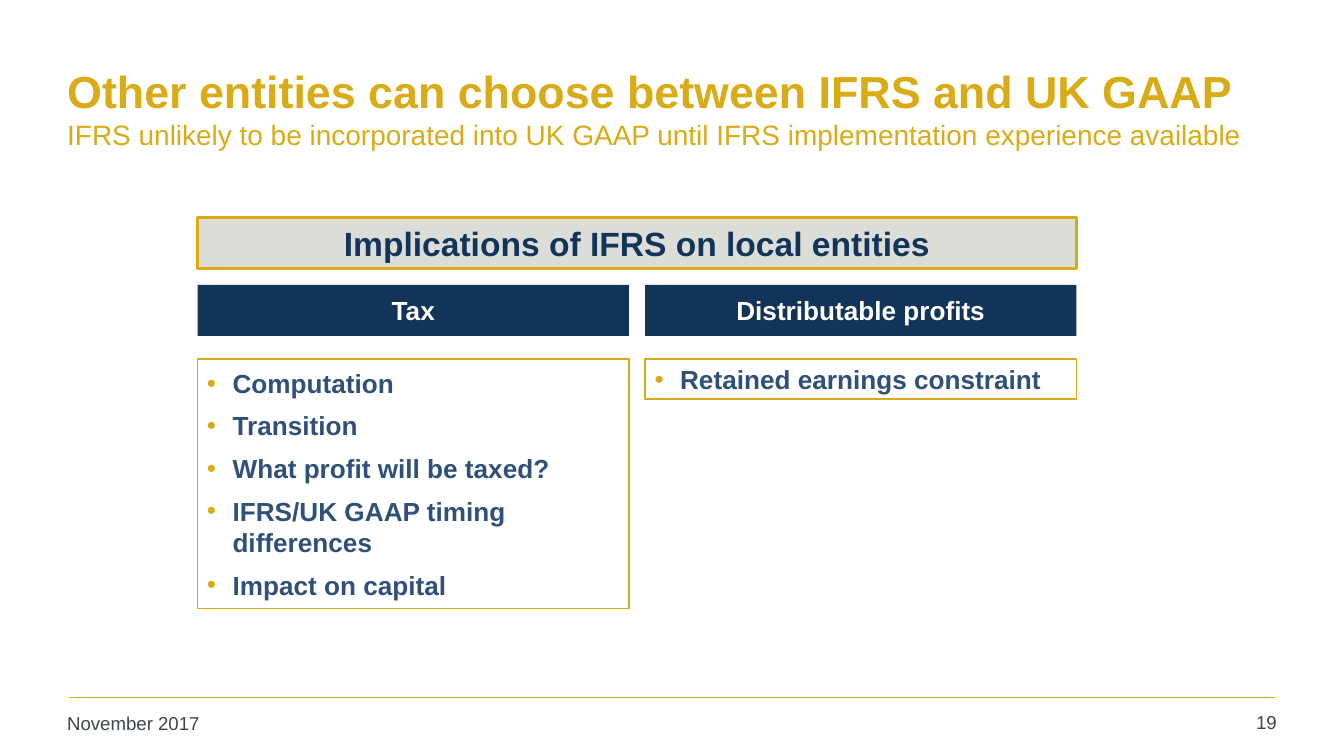
"""Build the slide on choosing between IFRS and UK GAAP."""
from copy import deepcopy
from dataclasses import dataclass

from lxml.etree import SubElement
from pptx import Presentation
from pptx.dml.color import RGBColor
from pptx.enum.shapes import MSO_CONNECTOR, MSO_SHAPE
from pptx.enum.text import MSO_ANCHOR, MSO_AUTO_SIZE, PP_ALIGN
from pptx.oxml.ns import qn
from pptx.util import Inches, Pt

GOLD = RGBColor(0xD9, 0xAB, 0x16)
BORDER_GOLD = RGBColor(0xD9, 0xAA, 0x11)
NAVY = RGBColor(0x11, 0x34, 0x58)
BLUE = RGBColor(0x2F, 0x50, 0x79)
SILVER = RGBColor(0xDC, 0xDD, 0xD9)
SLATE = RGBColor(0x3F, 0x45, 0x48)
WHITE = RGBColor(0xFF, 0xFF, 0xFF)

FONT = "Arial"
SLIDE_WIDTH = 10
SLIDE_HEIGHT = SLIDE_WIDTH * 9 / 16
MARGIN = 0.43
GRID_LEFT, COLUMN_WIDTH, GUTTER = 1.47, 3.21, 0.12
BANNER_TOP, HEADING_TOP, LIST_TOP = 1.62, 2.12, 2.67
BAND_HEIGHT = 0.38
INDENT = Inches(0.19)


@dataclass(frozen=True)
class Topic:
    heading: str
    points: tuple[str, ...]
    list_height: float


@dataclass(frozen=True)
class Footer:
    text: str
    left: float
    top: float
    width: float
    height: float
    align: PP_ALIGN


TOPICS = (
    Topic("Tax", ("Computation", "Transition", "What profit will be taxed?",
                  "IFRS/UK GAAP timing differences", "Impact on capital"), 1.86),
    Topic("Distributable profits", ("Retained earnings constraint",), 0.3),
)
FOOTERS = (
    Footer("19", SLIDE_WIDTH - MARGIN - 0.71, 5.25, 0.71, 0.28, PP_ALIGN.RIGHT),
    Footer("November 2017", MARGIN, 5.26, 2.2, 0.27, PP_ALIGN.LEFT),
)


def cell(column: int, top: float, height: float, span: int = 1) -> tuple:
    """Return the left, top, width and height of a span of grid columns."""
    step = COLUMN_WIDTH + GUTTER
    return (Inches(GRID_LEFT + column * step), Inches(top),
            Inches(span * step - GUTTER), Inches(height))


def place(shape, bounds: tuple) -> None:
    """Move a placeholder to the given bounds."""
    shape.left, shape.top, shape.width, shape.height = bounds


def set_frame(shape, anchor: MSO_ANCHOR, sides: float = 0.07, ends: float = 0.04):
    """Set wrapping, anchor and insets, and return the text frame."""
    frame = shape.text_frame
    frame.word_wrap = True
    frame.auto_size = MSO_AUTO_SIZE.NONE
    frame.vertical_anchor = anchor
    frame.margin_left = frame.margin_right = Inches(sides)
    frame.margin_top = frame.margin_bottom = Inches(ends)
    return frame


def add_run(paragraph, text: str, size: float, color: RGBColor, bold: bool = False):
    """Append a formatted run."""
    run = paragraph.add_run()
    run.text = text
    run.font.name = FONT
    run.font.size = Pt(size)
    run.font.bold = bold
    run.font.color.rgb = color
    return run


def add_bullet(paragraph) -> None:
    """Give a paragraph a gold bullet with a hanging indent."""
    properties = paragraph._p.get_or_add_pPr()
    properties.set("marL", str(INDENT))
    properties.set("indent", str(-INDENT))
    color = SubElement(properties, qn("a:buClr"))
    SubElement(color, qn("a:srgbClr"), val=str(GOLD))
    SubElement(properties, qn("a:buFont"), typeface=FONT)
    SubElement(properties, qn("a:buChar"), char="•")


def draw_title(title) -> None:
    """Fill the title placeholder with a headline and a subtitle line."""
    place(title, (Inches(MARGIN), Inches(0.33),
                  Inches(SLIDE_WIDTH - 2 * MARGIN), Inches(0.94)))
    paragraph = set_frame(title, MSO_ANCHOR.MIDDLE).paragraphs[0]
    paragraph.alignment = PP_ALIGN.LEFT
    headline = add_run(paragraph, "Other entities can choose between IFRS and UK GAAP",
                       24, GOLD, True)
    paragraph.add_line_break()
    paragraph._p[-1].append(deepcopy(headline._r.rPr))
    add_run(paragraph, "IFRS unlikely to be incorporated into UK GAAP until IFRS "
            "implementation experience available", 15, GOLD)


def draw_band(slide, bounds: tuple, fill: RGBColor):
    """Draw a borderless filled rectangle."""
    band = slide.shapes.add_shape(MSO_SHAPE.RECTANGLE, *bounds)
    band.shadow.inherit = False
    band.fill.solid()
    band.fill.fore_color.rgb = fill
    band.line.fill.background()
    return band


def draw_border(shape, width: float) -> None:
    """Outline a shape in gold."""
    shape.line.color.rgb = BORDER_GOLD
    shape.line.width = Pt(width)


def draw_banner(slide) -> None:
    """Draw the banner across both columns."""
    banner = draw_band(slide, cell(0, BANNER_TOP, BAND_HEIGHT, span=2), SILVER)
    draw_border(banner, 1.5)
    frame = set_frame(banner, MSO_ANCHOR.TOP)
    frame.auto_size = MSO_AUTO_SIZE.SHAPE_TO_FIT_TEXT
    paragraph = frame.paragraphs[0]
    paragraph.alignment = PP_ALIGN.CENTER
    add_run(paragraph, "Implications of IFRS on local entities", 18, NAVY, True)


def draw_topic(slide, column: int, topic: Topic, body) -> None:
    """Draw a topic heading and fill the list below it."""
    heading = draw_band(slide, cell(column, HEADING_TOP, BAND_HEIGHT), NAVY)
    paragraph = set_frame(heading, MSO_ANCHOR.MIDDLE, 0.06, 0.06).paragraphs[0]
    paragraph.alignment = PP_ALIGN.CENTER
    paragraph.space_after = Pt(9)
    add_run(paragraph, topic.heading, 14, WHITE, True)

    place(body, cell(column, LIST_TOP, topic.list_height))
    draw_border(body, 0.75)
    frame = set_frame(body, MSO_ANCHOR.MIDDLE)
    for index, point in enumerate(topic.points):
        paragraph = frame.add_paragraph() if index else frame.paragraphs[0]
        add_bullet(paragraph)
        paragraph.space_before = Pt(0)
        paragraph.space_after = Pt(6)
        add_run(paragraph, point, 14, BLUE, True)


def draw_footer(slide, footer: Footer) -> None:
    """Draw one footer text."""
    box = slide.shapes.add_textbox(Inches(footer.left), Inches(footer.top),
                                   Inches(footer.width), Inches(footer.height))
    paragraph = set_frame(box, MSO_ANCHOR.TOP).paragraphs[0]
    paragraph.alignment = footer.align
    add_run(paragraph, footer.text, 10, SLATE)


def draw_rule(slide) -> None:
    """Draw the gold rule above the footer."""
    inset, top = 0.51, Inches(5.19)
    rule = slide.shapes.add_connector(MSO_CONNECTOR.STRAIGHT, Inches(inset), top,
                                      Inches(SLIDE_WIDTH - inset), top)
    rule.line.color.rgb = GOLD
    rule.line.width = Pt(1)
    SubElement(rule._element.spPr, qn("a:effectLst"))


def main() -> None:
    """Build and save the presentation."""
    presentation = Presentation()
    presentation.slide_width = Inches(SLIDE_WIDTH)
    presentation.slide_height = Inches(SLIDE_HEIGHT)
    slide = presentation.slides.add_slide(presentation.slide_layouts[3])
    title, *bodies = slide.placeholders
    draw_rule(slide)
    draw_title(title)
    draw_banner(slide)
    for column, (topic, body) in enumerate(zip(TOPICS, bodies)):
        draw_topic(slide, column, topic, body)
    for footer in FOOTERS:
        draw_footer(slide, footer)
    presentation.save("out.pptx")


if __name__ == "__main__":
    main()
